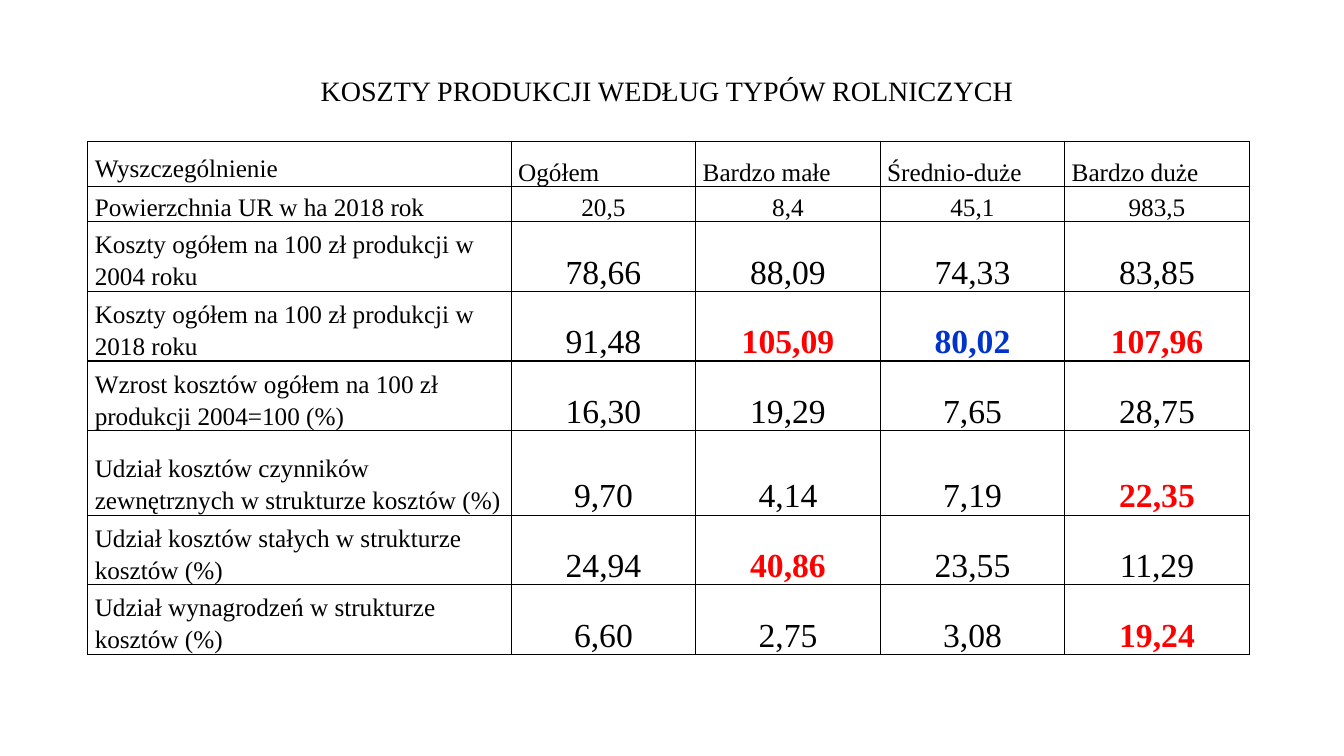
"""Build a slide with a table of production costs by farm type."""
from dataclasses import dataclass

from lxml.etree import SubElement
from pptx import Presentation
from pptx.dml.color import RGBColor
from pptx.enum.text import MSO_ANCHOR, MSO_AUTO_SIZE, PP_ALIGN
from pptx.oxml.ns import qn
from pptx.util import Emu, Pt


@dataclass(frozen=True)
class Theme:
    font: str = "Times New Roman"
    text: str = "000000"
    high: str = "FF0000"
    low: str = "0033CC"
    paper: str = "FFFFFF"
    title_size: int = 20
    label_size: int = 18
    value_size: int = 24


theme = Theme()


def px(n):
    return Emu(n * 9144)


def style(p, size, color=theme.text, bold=False):
    for r in p.runs:
        r.font.name = theme.font
        r.font.size = Pt(size)
        r.font.bold = bold
        r.font.color.rgb = RGBColor.from_string(color)


rows = [
    ["Wyszczególnienie", "Ogółem", "Bardzo małe", "Średnio-duże", "Bardzo duże"],
    ["Powierzchnia UR w ha 2018 rok", "20,5", "8,4", "45,1", "983,5"],
    ["Koszty ogółem na 100 zł produkcji w 2004 roku", "78,66", "88,09", "74,33", "83,85"],
    ["Koszty ogółem na 100 zł produkcji w 2018 roku", "91,48", "105,09", "80,02", "107,96"],
    ["Wzrost kosztów ogółem na 100 zł produkcji 2004=100 (%)", "16,30", "19,29", "7,65", "28,75"],
    ["Udział kosztów czynników zewnętrznych w strukturze kosztów (%)", "9,70", "4,14", "7,19", "22,35"],
    ["Udział kosztów stałych w strukturze kosztów (%)", "24,94", "40,86", "23,55", "11,29"],
    ["Udział wynagrodzeń w strukturze kosztów (%)", "6,60", "2,75", "3,08", "19,24"],
]
accents = {(3, 2): theme.high, (3, 3): theme.low, (3, 4): theme.high,
           (5, 4): theme.high, (6, 2): theme.high, (7, 4): theme.high}
col_widths = [420] + [183] * 4
row_heights = [45, 35, 69, 69, 69, 84, 69, 69]

prs = Presentation()
prs.slide_width, prs.slide_height = px(1333), px(750)
s = prs.slides.add_slide(prs.slide_layouts[5])

title = s.shapes.title
title.left, title.top, title.width, title.height = px(308), px(68), px(890), px(44)
tf = title.text_frame
tf.text = "KOSZTY PRODUKCJI WEDŁUG TYPÓW ROLNICZYCH"
tf.word_wrap = True
tf.auto_size = MSO_AUTO_SIZE.SHAPE_TO_FIT_TEXT
tf.vertical_anchor = MSO_ANCHOR.TOP
tf.paragraphs[0].alignment = PP_ALIGN.LEFT
style(tf.paragraphs[0], theme.title_size)

frame = s.shapes.add_table(len(rows), len(col_widths), px(87), px(140),
                           px(sum(col_widths)), px(sum(row_heights)))
table = frame.table
table.first_row = table.horz_banding = False
for col, width in zip(table.columns, col_widths):
    col.width = px(width)

for i, (row, height) in enumerate(zip(rows, row_heights)):
    table.rows[i].height = px(height)
    for j, text in enumerate(row):
        cell = table.cell(i, j)
        cell.margin_left = cell.margin_right = px(7)
        cell.margin_top = cell.margin_bottom = 0
        cell.vertical_anchor = MSO_ANCHOR.TOP if i == j == 0 else MSO_ANCHOR.BOTTOM

        p = cell.text_frame.paragraphs[0]
        p.text = text
        p.alignment = PP_ALIGN.CENTER if i and j else PP_ALIGN.LEFT
        p.line_spacing = 1.15 if i else 1.5
        p.space_after = Pt(8)
        size = theme.value_size if i > 1 and j else theme.label_size
        style(p, size, accents.get((i, j), theme.text), (i, j) in accents)

        tc_pr = cell._tc.get_or_add_tcPr()
        for side in ("a:lnL", "a:lnR", "a:lnT", "a:lnB"):
            ln = SubElement(tc_pr, qn(side), w=str(Pt(1)))
            SubElement(SubElement(ln, qn("a:solidFill")), qn("a:srgbClr"), val=theme.text)
        cell.fill.solid()
        cell.fill.fore_color.rgb = RGBColor.from_string(theme.paper)

prs.save("out.pptx")
